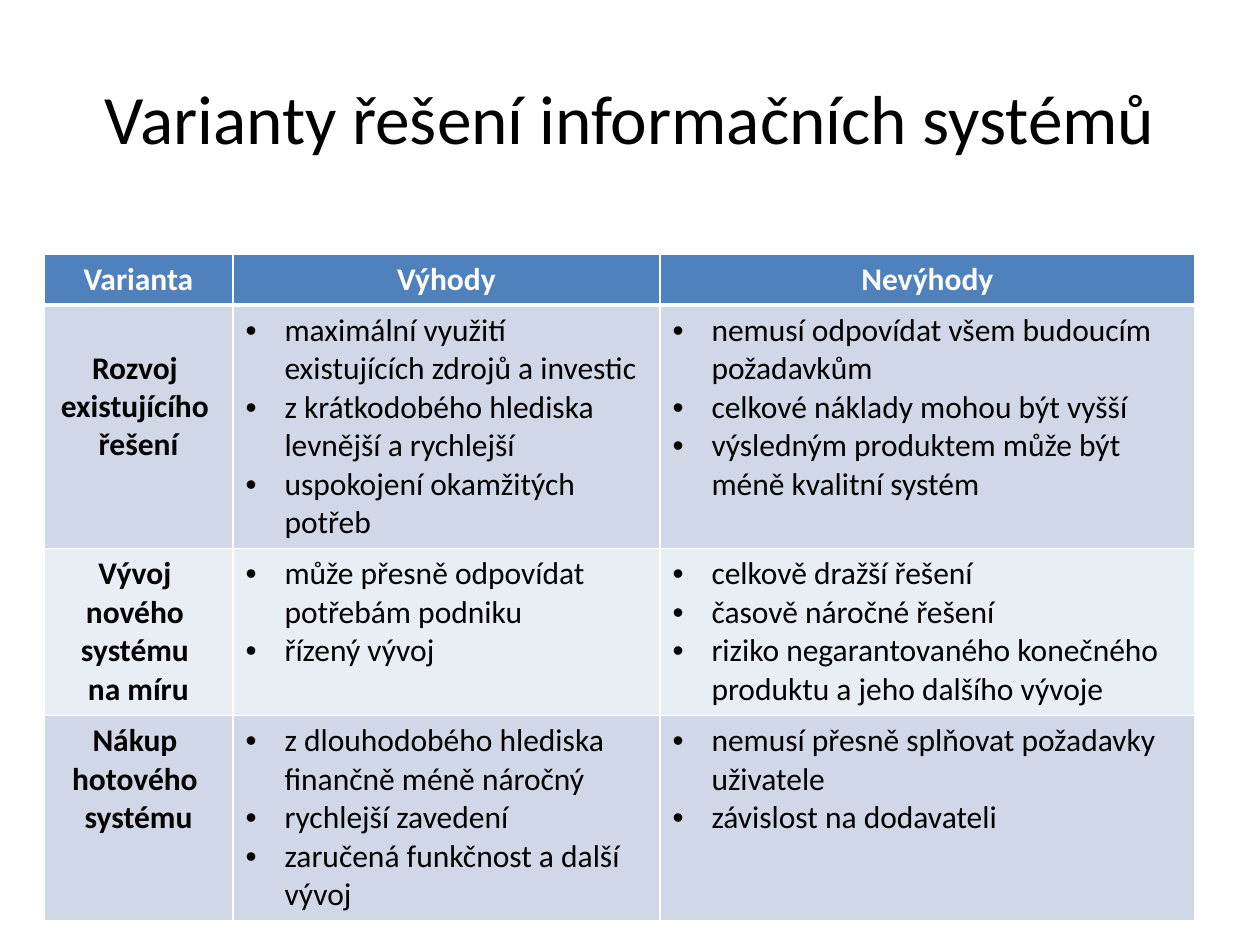
from lxml.etree import SubElement
from pptx import Presentation
from pptx.dml.color import RGBColor
from pptx.enum.text import MSO_ANCHOR, PP_ALIGN
from pptx.oxml.ns import qn
from pptx.util import Pt

PX = 914400 // 126
FONT = "Calibri"
BLACK = RGBColor(0x00, 0x00, 0x00)
WHITE = RGBColor(0xFF, 0xFF, 0xFF)
BLUE = RGBColor(0x4F, 0x81, 0xBD)
BANDS = RGBColor(0xD0, 0xD8, 0xE8), RGBColor(0xE9, 0xED, 0xF4)

LINE, PAD, INDENT = 38, 6, 39
WIDTHS = 189, 427, 535
HEIGHTS = 51, 243, 167, 204
HEADS = "Varianta", "Výhody", "Nevýhody"
ROWS = [
    (
        ["Rozvoj ", "existujícího ", "řešení"],
        ["maximální využití existujících zdrojů a investic",
         "z krátkodobého hlediska levnější a rychlejší",
         "uspokojení okamžitých potřeb"],
        ["nemusí odpovídat všem budoucím požadavkům",
         "celkové náklady mohou být vyšší",
         "výsledným produktem může být méně kvalitní systém"],
    ),
    (
        ["Vývoj ", "nového ", "systému ", "na míru"],
        ["může přesně odpovídat potřebám podniku",
         "řízený vývoj"],
        ["celkově dražší řešení",
         "časově náročné řešení",
         "riziko negarantovaného konečného produktu a jeho dalšího vývoje"],
    ),
    (
        ["Nákup ", "hotového ", "systému"],
        ["z dlouhodobého hlediska finančně méně náročný",
         "rychlejší zavedení",
         "zaručená funkčnost a další vývoj"],
        ["nemusí přesně splňovat požadavky uživatele",
         "závislost na dodavateli"],
    ),
]


def style(para, size, color, bold=False):
    font = para.font
    font.name, font.size, font.bold = FONT, Pt(size), bold
    font.color.rgb = color


def add_bullet(para):
    props = para._p.get_or_add_pPr()
    props.set("marL", str(INDENT * PX))
    props.set("indent", str(-INDENT * PX))
    SubElement(props, qn("a:buFont"), typeface="Arial")
    SubElement(props, qn("a:buChar"), char="•")


def add_edges(cell, base):
    """Draw white cell borders, with the bottom one base points wide."""
    props = cell._tc.get_or_add_tcPr()
    for side, width in zip("LRTB", (1, 1, 1, base)):
        edge = SubElement(props, qn(f"a:ln{side}"), w=str(Pt(width)))
        fill = SubElement(edge, qn("a:solidFill"))
        SubElement(fill, qn("a:srgbClr"), val=str(WHITE))


def fill_cell(cell, lines, back, color=BLACK, bullets=False, base=1):
    add_edges(cell, base)
    cell.fill.solid()
    cell.fill.fore_color.rgb = back
    cell.text = "\n".join(lines)
    for para in cell.text_frame.paragraphs:
        if bullets:
            add_bullet(para)
        else:
            para.alignment = PP_ALIGN.CENTER
        style(para, 18, color, not bullets)


def add_title(slide, text):
    title = slide.shapes.title
    title.left, title.top = 63 * PX, 38 * PX
    title.width, title.height = 1134 * PX, 158 * PX
    frame = title.text_frame
    frame.text = text
    frame.vertical_anchor = MSO_ANCHOR.MIDDLE
    para = frame.paragraphs[0]
    para.alignment = PP_ALIGN.CENTER
    style(para, 39.6, BLACK)


def add_grid(slide):
    table = slide.shapes.add_table(
        len(HEIGHTS), len(WIDTHS), 44 * PX, 254 * PX,
        sum(WIDTHS) * PX, sum(HEIGHTS) * PX).table
    for col, width in zip(table.columns, WIDTHS):
        col.width = width * PX
    for row, height in zip(table.rows, HEIGHTS):
        row.height = height * PX
    for col, head in enumerate(HEADS):
        fill_cell(table.cell(0, col), [head], BLUE, WHITE, base=3)
    for row, texts in enumerate(ROWS, 1):
        back = BANDS[(row - 1) % 2]
        for col, lines in enumerate(texts):
            fill_cell(table.cell(row, col), lines, back, bullets=col > 0)
    table.cell(1, 0).margin_top = (PAD + LINE) * PX


def main():
    deck = Presentation()
    deck.slide_width, deck.slide_height = 1260 * PX, 945 * PX
    slide = deck.slides.add_slide(deck.slide_layouts[5])
    add_title(slide, "Varianty řešení informačních systémů")
    add_grid(slide)
    deck.save("out.pptx")


if __name__ == "__main__":
    main()
